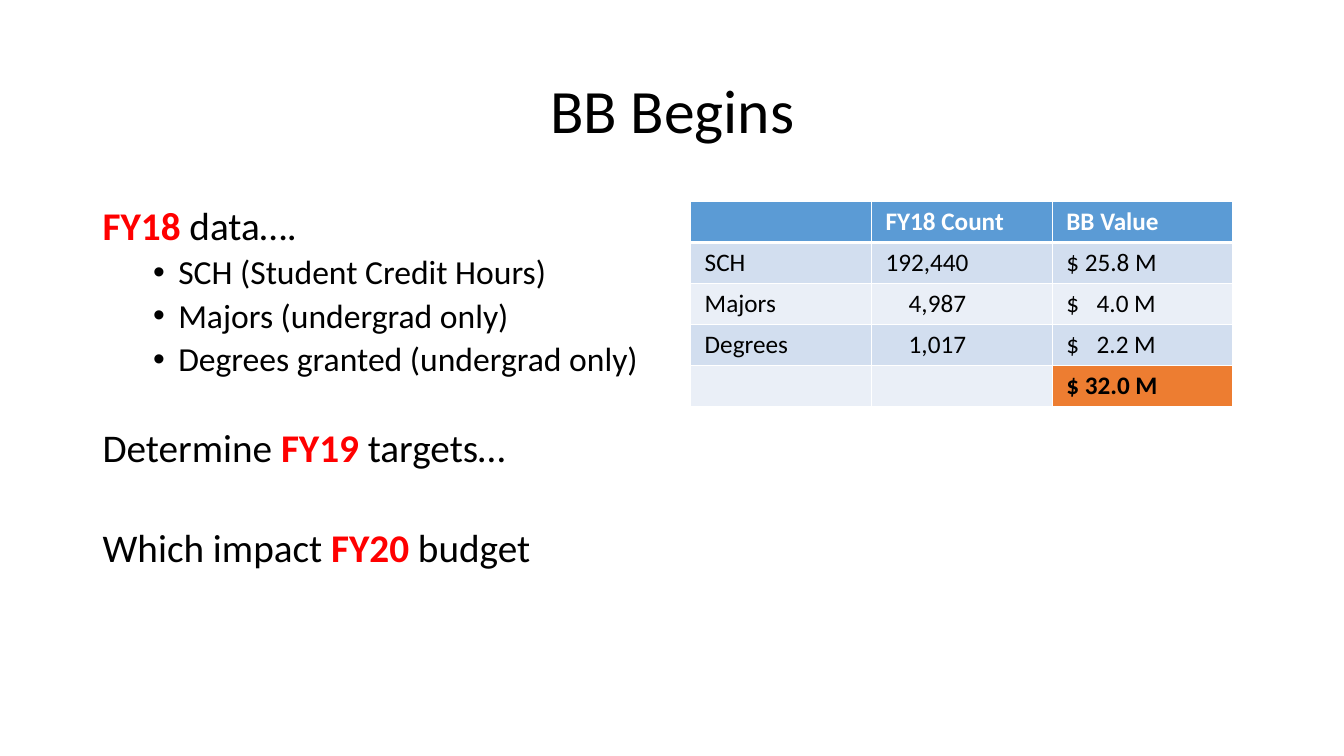
from lxml.etree import SubElement
from pptx import Presentation
from pptx.dml.color import RGBColor
from pptx.enum.text import MSO_ANCHOR as Anchor, PP_ALIGN as Align
from pptx.oxml import parse_xml
from pptx.oxml.ns import nsdecls, qn
from pptx.util import Emu, Pt

FONT = "Calibri"
COLORS = {
    "text": "000000",
    "fiscal_year": "FF0000",
    "white": "FFFFFF",
    "header": "5B9BD5",
    "odd_row": "D2DEEF",
    "even_row": "EAEFF7",
    "total": "ED7D31",
}

# Each line: (level, space before in points, [(text, is fiscal year)])
OUTLINE = [
    (0, 10, [("FY18", True), (" data….", False)]),
    (1, 5, [("SCH (Student Credit Hours)", False)]),
    (1, 5, [("Majors (undergrad only)", False)]),
    (1, 5, [("Degrees granted (undergrad only)", False)]),
    (0, 36, [("Determine ", False), ("FY19", True), (" targets…", False)]),
    (0, 41, [("Which impact ", False), ("FY20", True), (" budget", False)]),
]
VALUES = [
    ["", "FY18 Count", "BB Value"],
    ["SCH", "192,440", "$ 25.8 M"],
    ["Majors", "4,987", "$\t4.0 M"],
    ["Degrees", "1,017", "$\t2.2 M"],
    ["", "", "$ 32.0 M"],
]
SHORT_COUNT_INDENT = 23
AMOUNT_TAB = 30


def px(length):
    """100 px to the inch."""
    return Emu(length * 9144)


def color(name):
    return RGBColor.from_string(COLORS[name])


def set_font(font, size, color_name="text", bold=False):
    font.name = FONT
    font.size = Pt(size)
    font.bold = bold
    font.color.rgb = color(color_name)


def place(shape, left, top, width, height):
    shape.left, shape.top = px(left), px(top)
    shape.width, shape.height = px(width), px(height)


def add_title(slide, box):
    title = slide.shapes.title
    place(title, *box)
    frame = title.text_frame
    frame.text = "BB Begins"
    frame.vertical_anchor = Anchor.MIDDLE
    paragraph = frame.paragraphs[0]
    paragraph.alignment = Align.CENTER
    paragraph.line_spacing = 0.9
    set_font(paragraph.font, 44)


def add_bullet(paragraph):
    properties = paragraph._p.get_or_add_pPr()
    properties.set("marL", str(px(75)))
    properties.set("indent", str(px(-25)))
    SubElement(properties, qn("a:buFont"), typeface="Arial")
    SubElement(properties, qn("a:buChar"), char="•")


def add_outline(slide, box):
    frame = slide.shapes.add_textbox(*map(px, box)).text_frame
    frame.word_wrap = True
    for index, (level, space, pieces) in enumerate(OUTLINE):
        paragraph = frame.add_paragraph() if index else frame.paragraphs[0]
        paragraph.level = level
        paragraph.line_spacing = 0.9
        paragraph.space_before = Pt(space)
        set_font(paragraph.font, 24 if level else 28)
        if level:
            add_bullet(paragraph)
        for text, is_year in pieces:
            run = paragraph.add_run()
            run.text = text
            if is_year:
                run.font.bold = True
                run.font.color.rgb = color("fiscal_year")


def set_borders(cell, top, bottom):
    """White borders; they come before the fill in the cell properties."""
    properties = cell._tc.get_or_add_tcPr()
    widths = {"lnL": 1, "lnR": 1, "lnT": top, "lnB": bottom}
    for index, (side, points) in enumerate(widths.items()):
        properties.insert(index, parse_xml(
            f'<a:{side} {nsdecls("a")} w="{Pt(points)}"><a:solidFill>'
            f'<a:srgbClr val="{COLORS["white"]}"/></a:solidFill></a:{side}>'))


def align_number(paragraph, text):
    """Line up shorter numbers under the longest one."""
    properties = paragraph._p.get_or_add_pPr()
    if "\t" in text:
        tabs = SubElement(properties, qn("a:tabLst"))
        SubElement(tabs, qn("a:tab"), pos=str(px(AMOUNT_TAB)), algn="l")
    elif len(text) == len("4,987") and text[0].isdigit():
        properties.set("marL", str(px(SHORT_COUNT_INDENT)))
        properties.set("indent", "0")


def add_value_table(slide, box):
    rows, columns = len(VALUES), len(VALUES[0])
    table = slide.shapes.add_table(rows, columns, *map(px, box)).table
    for row, texts in enumerate(VALUES):
        for column, text in enumerate(texts):
            cell = table.cell(row, column)
            is_header = row == 0
            is_total = (row, column) == (rows - 1, columns - 1)
            # Fill and borders
            fill = ("header" if is_header else "total" if is_total
                    else "odd_row" if row % 2 else "even_row")
            cell.fill.solid()
            cell.fill.fore_color.rgb = color(fill)
            set_borders(cell, 3 if row == 1 else 1, 3 if is_header else 1)
            # Text
            cell.margin_left = cell.margin_right = px(14)
            cell.margin_top = cell.margin_bottom = px(5)
            cell.text = text
            paragraph = cell.text_frame.paragraphs[0]
            align_number(paragraph, text)
            set_font(paragraph.font, 18, "white" if is_header else "text",
                     is_header or is_total)


def main():
    presentation = Presentation()
    presentation.slide_width, presentation.slide_height = px(1333), px(750)
    slide = presentation.slides.add_slide(presentation.slide_layouts[5])
    add_title(slide, (92, 40, 1150, 145))
    add_outline(slide, (92, 200, 567, 476))
    add_value_table(slide, (685, 200, 538, 203))
    presentation.save("out.pptx")


if __name__ == "__main__":
    main()
